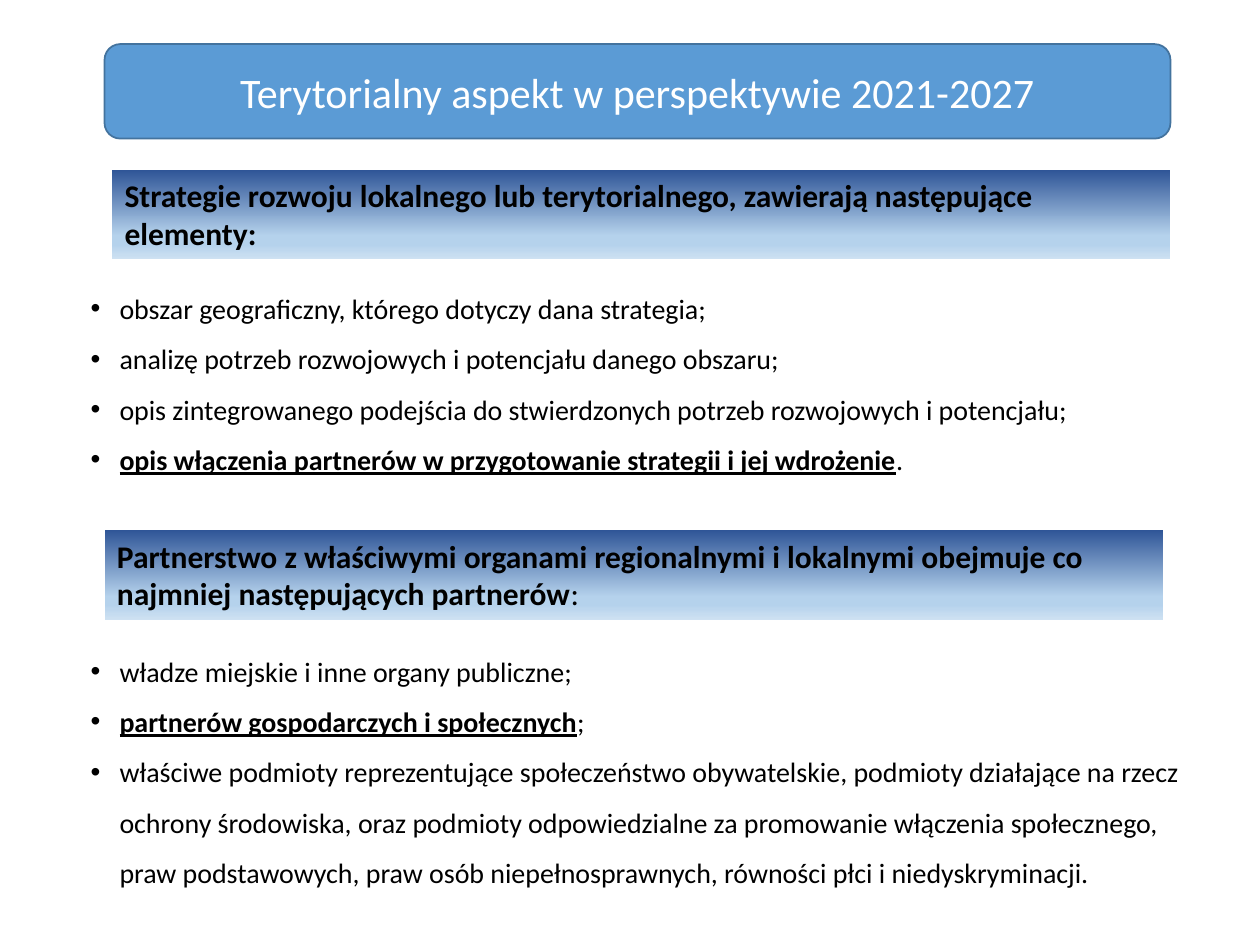
from copy import deepcopy
from dataclasses import dataclass

from pptx import Presentation
from pptx.dml.color import RGBColor
from pptx.enum.shapes import MSO_SHAPE
from pptx.enum.text import MSO_ANCHOR, MSO_AUTO_SIZE, PP_ALIGN
from pptx.oxml.ns import qn
from pptx.util import Inches, Pt

RECTANGLE, ROUNDED = MSO_SHAPE.RECTANGLE, MSO_SHAPE.ROUNDED_RECTANGLE
TOP, MIDDLE = MSO_ANCHOR.TOP, MSO_ANCHOR.MIDDLE
LEFT, CENTER = PP_ALIGN.LEFT, PP_ALIGN.CENTER
GROW, FIXED = MSO_AUTO_SIZE.SHAPE_TO_FIT_TEXT, MSO_AUTO_SIZE.NONE


@dataclass(frozen=True)
class Theme:
    """Colours, font and type sizes of the slide."""
    font: str = "Calibri"
    title_size: int = 24
    heading_size: int = 18
    body_size: int = 16
    ink: str = "000000"
    title_ink: str = "FFFFFF"
    title_fill: str = "5B9BD5"
    title_line: str = "43739E"
    band: tuple = ((0, "2F5597"), (0.74, "B5D2EC"), (0.83, "B5D2EC"), (1, "CEE1F2"))


THEME = Theme()
BOLD = {"bold": True}
STRESSED = {"bold": True, "underline": True}
PLAIN = {}

STRATEGY_HEADING = [
    ("Strategie rozwoju lokalnego lub terytorialnego, zawierają następujące elementy:", BOLD),
]
STRATEGY_ELEMENTS = [
    [("obszar geograficzny, którego dotyczy dana strategia;", PLAIN)],
    [("analizę potrzeb rozwojowych i potencjału danego obszaru;", PLAIN)],
    [("opis zintegrowanego podejścia do stwierdzonych potrzeb rozwojowych i potencjału;", PLAIN)],
    [("opis włączenia partnerów w przygotowanie strategii i jej wdrożenie", STRESSED), (".", PLAIN)],
]
PARTNERSHIP_HEADING = [
    ("Partnerstwo z właściwymi organami regionalnymi i lokalnymi obejmuje co "
     "najmniej następujących partnerów", BOLD),
    (":", PLAIN),
]
PARTNERS = [
    [("władze miejskie i inne organy publiczne;", PLAIN)],
    [("partnerów gospodarczych i społecznych", STRESSED), (";", PLAIN)],
    [("właściwe podmioty reprezentujące społeczeństwo obywatelskie, podmioty działające na rzecz "
      "ochrony środowiska, oraz podmioty odpowiedzialne za promowanie włączenia społecznego, "
      "praw podstawowych, praw osób niepełnosprawnych, równości płci i niedyskryminacji.", PLAIN)],
]


def apply_format(target, values):
    """Set every named attribute on the target."""
    for name, value in values.items():
        setattr(target, name, value)


def write_runs(paragraph, runs, size, colour):
    """Fill a paragraph with formatted runs."""
    for text, emphasis in runs:
        run = paragraph.add_run()
        run.text = text
        apply_format(run.font, {"name": THEME.font, "size": Pt(size), **emphasis})
        run.font.color.rgb = RGBColor.from_string(colour)


def add_panel(slide, preset, box, runs, size, colour, anchor, align, auto_size):
    """Add a preset shape holding one paragraph."""
    panel = slide.shapes.add_shape(preset, *map(Inches, box))
    panel.shadow.inherit = False
    apply_format(panel.text_frame, {
        "word_wrap": True, "vertical_anchor": anchor, "auto_size": auto_size})
    paragraph = panel.text_frame.paragraphs[0]
    paragraph.alignment = align
    write_runs(paragraph, runs, size, colour)
    return panel


def add_title(slide, box, text):
    """Add the rounded title panel."""
    title = add_panel(slide, ROUNDED, box, [(text, PLAIN)], THEME.title_size,
                      THEME.title_ink, MIDDLE, CENTER, FIXED)
    title.fill.solid()
    title.fill.fore_color.rgb = RGBColor.from_string(THEME.title_fill)
    title.line.color.rgb = RGBColor.from_string(THEME.title_line)
    title.line.width = Pt(1)


def add_heading(slide, box, runs):
    """Add a section heading on a vertical gradient band."""
    heading = add_panel(slide, RECTANGLE, box, runs, THEME.heading_size,
                        THEME.ink, TOP, LEFT, GROW)
    heading.line.fill.background()
    heading.fill.gradient()
    heading.fill.gradient_angle = 270
    stop_list = heading.element.spPr.find(".//" + qn("a:gsLst"))
    for _ in range(len(THEME.band) - len(stop_list)):
        stop_list.append(deepcopy(stop_list[0]))
    for stop, (position, colour) in zip(heading.fill.gradient_stops, THEME.band):
        stop.position = position
        stop.color.rgb = RGBColor.from_string(colour)


def add_bullets(slide, box, items):
    """Add a bulleted list with wide line spacing."""
    frame = slide.shapes.add_textbox(*map(Inches, box)).text_frame
    apply_format(frame, {"word_wrap": True, "auto_size": GROW})
    for index, runs in enumerate(items):
        paragraph = frame.add_paragraph() if index else frame.paragraphs[0]
        paragraph.line_spacing = 1.5
        properties = paragraph._p.get_or_add_pPr()
        properties.set("marL", str(Inches(0.23)))
        properties.set("indent", str(Inches(-0.23)))
        properties.makeelement(qn("a:buFont"))
        for tag, name, value in (("a:buFont", "typeface", "Arial"), ("a:buChar", "char", "•")):
            bullet = properties.makeelement(qn(tag), {name: value})
            properties.append(bullet)
        write_runs(paragraph, runs, THEME.body_size, THEME.ink)


def main():
    """Build and save the slide."""
    deck = Presentation()
    apply_format(deck, {"slide_width": Inches(10), "slide_height": Inches(7.5)})
    slide = deck.slides.add_slide(deck.slide_layouts[6])
    add_bullets(slide, (0.62, 2.13, 8.95, 1.72), STRATEGY_ELEMENTS)
    add_heading(slide, (0.89, 1.35, 8.4, 0.71), STRATEGY_HEADING)
    add_heading(slide, (0.83, 4.21, 8.4, 0.71), PARTNERSHIP_HEADING)
    add_title(slide, (0.83, 0.35, 8.46, 0.75), "Terytorialny aspekt w perspektywie 2021-2027")
    add_bullets(slide, (0.62, 5.01, 9.09, 2.12), PARTNERS)
    deck.save("out.pptx")


if __name__ == "__main__":
    main()
